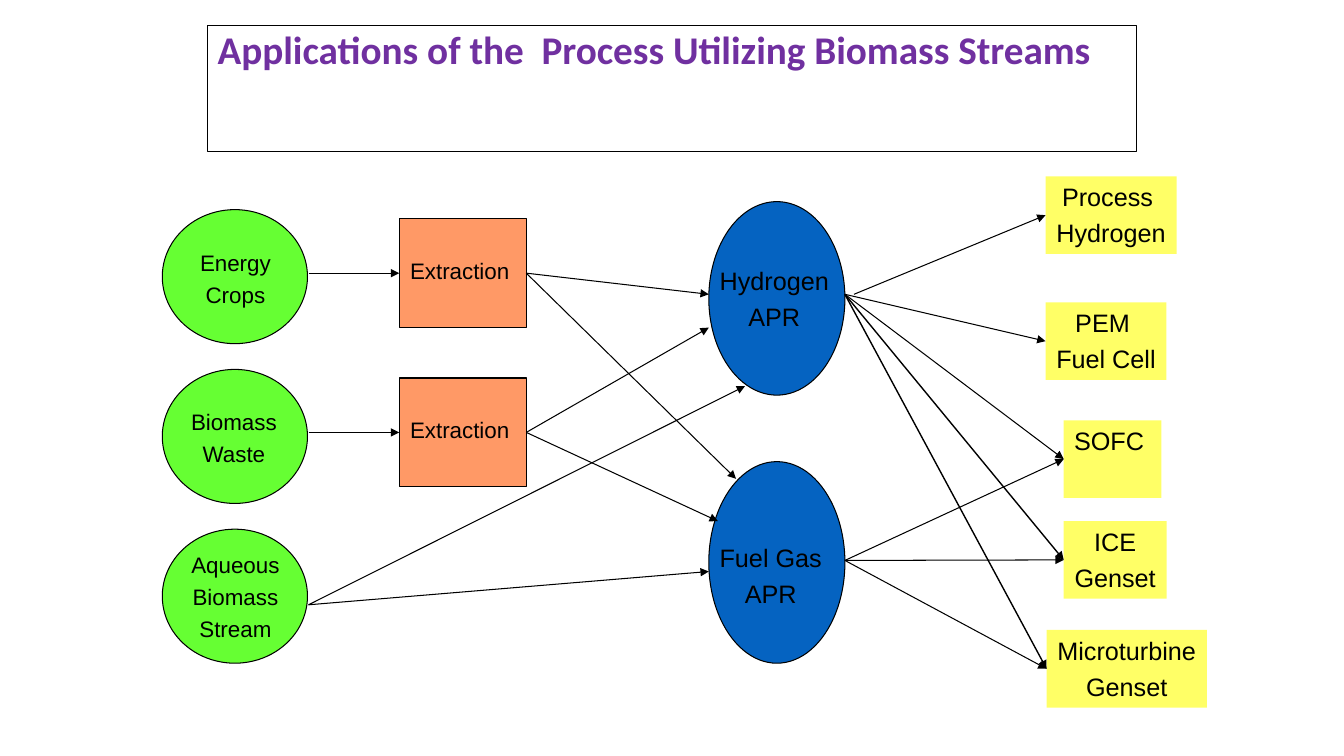
"""Build the slide on applications of the process that uses biomass streams."""
from lxml import etree
from pptx import Presentation
from pptx.dml.color import RGBColor
from pptx.enum.shapes import MSO_CONNECTOR, MSO_SHAPE
from pptx.enum.text import MSO_ANCHOR, PP_ALIGN
from pptx.oxml.ns import qn
from pptx.util import Inches, Pt

BLACK = "000000"
prs = Presentation()
prs.slide_width, prs.slide_height = Inches(13.33), Inches(7.5)
s = prs.slides.add_slide(prs.slide_layouts[6])


def box(x, y, w, h, text="", shape=MSO_SHAPE.RECTANGLE, fill=None, line=None,
        size=16, font="Arial", color=BLACK, bold=False, align=PP_ALIGN.CENTER,
        before=0.23, spacing=None, wrap=False):
    area = [Inches(v) for v in (x, y, w, h)]
    if fill:
        sp = s.shapes.add_shape(shape, *area)
        sp.shadow.inherit = False
        sp.fill.solid()
        sp.fill.fore_color.rgb = RGBColor.from_string(fill)
        if line:
            sp.line.color.rgb = RGBColor.from_string(line)
            sp.line.width = Pt(0.75)
        else:
            sp.line.fill.background()
    else:
        sp = s.shapes.add_textbox(*area)
    if text:
        tf = sp.text_frame
        tf.word_wrap = wrap
        tf.vertical_anchor = MSO_ANCHOR.TOP
        for i, words in enumerate(text.split("\n")):
            p = tf.add_paragraph() if i else tf.paragraphs[0]
            p.alignment, p.line_spacing = align, spacing
            p.space_before = Pt(round(before * size, 1))
            r = p.add_run()
            r.text = words
            r.font.name, r.font.size, r.font.bold = font, Pt(size), bold
            r.font.color.rgb = RGBColor.from_string(color)
    return sp


def arrow(x1, y1, x2, y2, source=None, target=None, width=0.75):
    c = s.shapes.add_connector(MSO_CONNECTOR.STRAIGHT, *[Inches(v) for v in (x1, y1, x2, y2)])
    if source is not None:
        c.begin_connect(source, 3)
    if target is not None:
        c.end_connect(target, 1)
    c.line.color.rgb = RGBColor.from_string(BLACK)
    c.line.width = Pt(width)
    etree.SubElement(c.line._get_or_add_ln(), qn("a:tailEnd"), type="triangle")
    etree.SubElement(c._element.spPr, qn("a:effectLst"))


box(2.06, 0.25, 9.21, 1.25, "Applications of the  Process Utilizing Biomass Streams",
    fill="FFFFFF", line=BLACK, size=28, font="Calibri", color="7030A0", bold=True,
    align=PP_ALIGN.LEFT, before=0, spacing=0.9, wrap=True)

feeds = [
    ("Energy\nCrops", 1.88, 2.42, 0.91, 0.69),
    ("Biomass\nWaste", 1.79, 4.0, 1.06, 0.69),
    ("Aqueous\nBiomass\nStream", 1.79, 5.42, 1.09, 1.02),
]
for i, (label, *area) in enumerate(feeds):
    box(1.61, 2.08 + 1.585 * i, 1.44, 1.33, shape=MSO_SHAPE.OVAL, fill="66FF33", line=BLACK)
    box(*area, label)

extractions = []
for top in (2.17, 3.75):
    extractions.append(box(3.96, top, 1.26, 1.08, fill="FF9966", line=BLACK))
    box(3.96, top + 0.33, 1.2, 0.37, "Extraction")

reactors = [
    ("Hydrogen\nAPR", 2.0, 1.92, 2.58, 1.3),
    ("Fuel Gas\nAPR", 4.58, 2.0, 5.33, 1.23),
]
for label, top, height, label_top, label_width in reactors:
    box(7.03, top, 1.35, height, shape=MSO_SHAPE.OVAL, fill="0563C1", line=BLACK)
    box(7.03, label_top, label_width, 0.77, label, size=18)

uses = [
    ("Process \nHydrogen", 10.37, 1.75, 1.3),
    ("PEM \nFuel Cell", 10.37, 3.0, 1.2),
    ("SOFC ", 10.55, 4.17, 0.97),
    ("ICE\nGenset", 10.55, 5.17, 1.02),
    ("Microturbine\nGenset", 10.38, 6.25, 1.59),
]
process, pem, sofc, ice, turbine = [
    box(x, y, w, 0.77, label, fill="FFFF66", size=18) for label, x, y, w in uses]

for extraction, y, ends in zip(extractions, (2.71, 4.29),
                               ([(7.03, 2.92), (7.3, 4.75)], [(7.03, 3.25), (7.12, 5.17)])):
    arrow(3.06, y, 3.96, y, target=extraction)
    for end in ends:
        arrow(5.22, y, *end, source=extraction)
for end in ((7.39, 3.83), (7.03, 5.67)):
    arrow(3.06, 6, *end)

outputs = [
    (8.47, 2.92, process, 0.75), (8.38, 2.92, pem, 0.75), (8.38, 2.92, sofc, 0.75),
    (8.38, 2.92, ice, 1), (8.38, 2.92, turbine, 1),
    (8.38, 5.56, sofc, 0.75), (8.38, 5.56, ice, 0.75), (8.38, 5.56, turbine, 0.75),
]
for x, y, use, width in outputs:
    arrow(x, y, 10.37, y, target=use, width=width)

prs.save("out.pptx")
